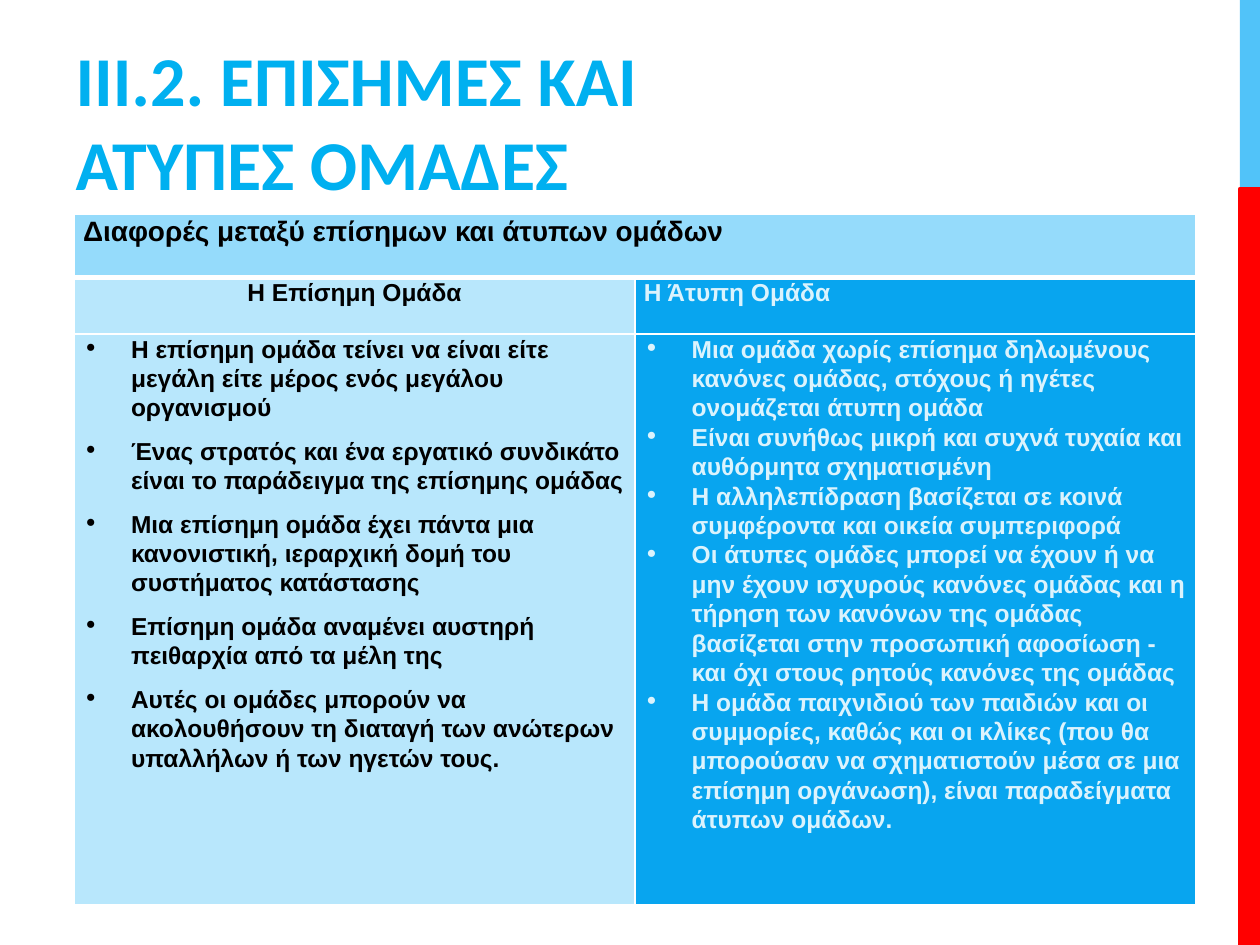
from pptx import Presentation
from pptx.dml.color import RGBColor as RGB
from pptx.enum.shapes import MSO_SHAPE as SHAPE
from pptx.enum.text import MSO_ANCHOR as ANCHOR, MSO_AUTO_SIZE as AUTO, PP_ALIGN as AL
from pptx.oxml import parse_xml
from pptx.oxml.ns import nsdecls
from pptx.util import Inches, Pt

THEME = dict(
    title="00B0F0", sky="51C3F9", red="FF0000", white="FFFFFF", black="000000",
    head="95DBFB", pale="B8E7FC", blue="08A5EF", ice="DBF3FD",
    title_size=40, head_size=16, body_size=14, title_font="Calibri", font="Arial",
)
FORMAL = [
    "Η επίσημη ομάδα τείνει να είναι είτε μεγάλη είτε μέρος ενός μεγάλου οργανισμού",
    "Ένας στρατός και ένα εργατικό συνδικάτο είναι το παράδειγμα της επίσημης ομάδας",
    "Μια επίσημη ομάδα έχει πάντα μια κανονιστική, ιεραρχική δομή του συστήματος κατάστασης",
    "Επίσημη ομάδα αναμένει αυστηρή πειθαρχία από τα μέλη της",
    "Αυτές οι ομάδες μπορούν να ακολουθήσουν τη διαταγή των ανώτερων υπαλλήλων ή των ηγετών τους.",
]
INFORMAL = [
    "Μια ομάδα χωρίς επίσημα δηλωμένους κανόνες ομάδας, στόχους ή ηγέτες ονομάζεται άτυπη ομάδα",
    "Είναι συνήθως μικρή και συχνά τυχαία και αυθόρμητα σχηματισμένη",
    "Η αλληλεπίδραση βασίζεται σε κοινά συμφέροντα και οικεία συμπεριφορά",
    "Οι άτυπες ομάδες μπορεί να έχουν ή να μην έχουν ισχυρούς κανόνες ομάδας και η τήρηση "
    "των κανόνων της ομάδας βασίζεται στην προσωπική αφοσίωση - και όχι στους ρητούς κανόνες της ομάδας",
    "Η ομάδα παιχνιδιού των παιδιών και οι συμμορίες, καθώς και οι κλίκες (που θα μπορούσαν "
    "να σχηματιστούν μέσα σε μια επίσημη οργάνωση), είναι παραδείγματα άτυπων ομάδων.",
]


def write(tf, lines, color="black", size="body_size", font="font",
          align=AL.LEFT, spacing=1.07, gap=0, bullet=False):
    for i, line in enumerate(lines):
        p = tf.add_paragraph() if i else tf.paragraphs[0]
        if bullet:
            pPr = p._p.get_or_add_pPr()
            pPr.set("marL", str(Inches(0.38)))
            pPr.set("indent", str(-Inches(0.38)))
            pPr.append(parse_xml(f'<a:buClr {nsdecls("a")}><a:srgbClr val="{THEME[color]}"/></a:buClr>'))
            pPr.append(parse_xml(f'<a:buChar {nsdecls("a")} char="∙"/>'))
        p.alignment, p.line_spacing = align, spacing
        if i and gap:
            p.space_before = Pt(gap)
        r = p.add_run()
        r.text = line
        r.font.name, r.font.size, r.font.bold = THEME[font], Pt(THEME[size]), True
        r.font.color.rgb = RGB.from_string(THEME[color])


def style_cell(cell, fill, bottom=1):
    tcPr = cell._tc.get_or_add_tcPr()
    for side, width in zip("LRTB", (1, 1, 1, bottom)):
        tcPr.append(parse_xml(
            f'<a:ln{side} {nsdecls("a")} w="{Pt(width)}"><a:solidFill>'
            f'<a:srgbClr val="{THEME["white"]}"/></a:solidFill></a:ln{side}>'))
    cell.fill.solid()
    cell.fill.fore_color.rgb = RGB.from_string(THEME[fill])
    cell.margin_left = cell.margin_right = Inches(0.07)
    cell.margin_top = cell.margin_bottom = 0


prs = Presentation()
prs.slide_width, prs.slide_height = Inches(10), Inches(7.5)
W, H = prs.slide_width, prs.slide_height
s = prs.slides.add_slide(prs.slide_layouts[5])

band = Inches(0.16)
for color, top, share, line in (("sky", 0, 0.2, 0), ("red", 0.2, 0.8, 2.25)):
    sp = s.shapes.add_shape(SHAPE.RECTANGLE, W - band, int(H * top), band, int(H * share))
    sp.shadow.inherit = False
    sp.fill.solid()
    sp.fill.fore_color.rgb = RGB.from_string(THEME[color])
    if line:
        sp.line.color.rgb = RGB.from_string(THEME[color])
        sp.line.width = Pt(line)
    else:
        sp.line.fill.background()

title = s.shapes.title
title.left, title.top, title.width, title.height = map(Inches, (0.5, 0.17, 6.33, 1.5))
tf = title.text_frame
tf.word_wrap, tf.auto_size, tf.vertical_anchor = True, AUTO.NONE, ANCHOR.BOTTOM
write(tf, ["III.2. ΕΠΙΣΗΜΕΣ ΚΑΙ ΑΤΥΠΕΣ ΟΜΑΔΕΣ"], color="title", size="title_size",
      font="title_font", spacing=1.0)

rows = [Inches(h) for h in (0.5, 0.45, 4.53)]
table = s.shapes.add_table(3, 2, Inches(0.59), Inches(1.7), Inches(8.9), sum(rows)).table
for row, height in zip(table.rows, rows):
    row.height = height

for cell in table.rows[0].cells:
    style_cell(cell, "head", bottom=3)
table.cell(0, 0).merge(table.cell(0, 1))
write(table.cell(0, 0).text_frame, ["Διαφορές μεταξύ επίσημων και άτυπων ομάδων"], size="head_size")

columns = (
    ("Η Επίσημη Ομάδα", FORMAL, "pale", "black", AL.CENTER, 8),
    ("Η Άτυπη Ομάδα", INFORMAL, "blue", "ice", AL.LEFT, 0),
)
for c, (heading, points, fill, color, align, gap) in enumerate(columns):
    for r in (1, 2):
        style_cell(table.cell(r, c), fill)
    write(table.cell(1, c).text_frame, [heading], color=color, align=align)
    write(table.cell(2, c).text_frame, points, color=color, gap=gap, bullet=True)

prs.save("out.pptx")
